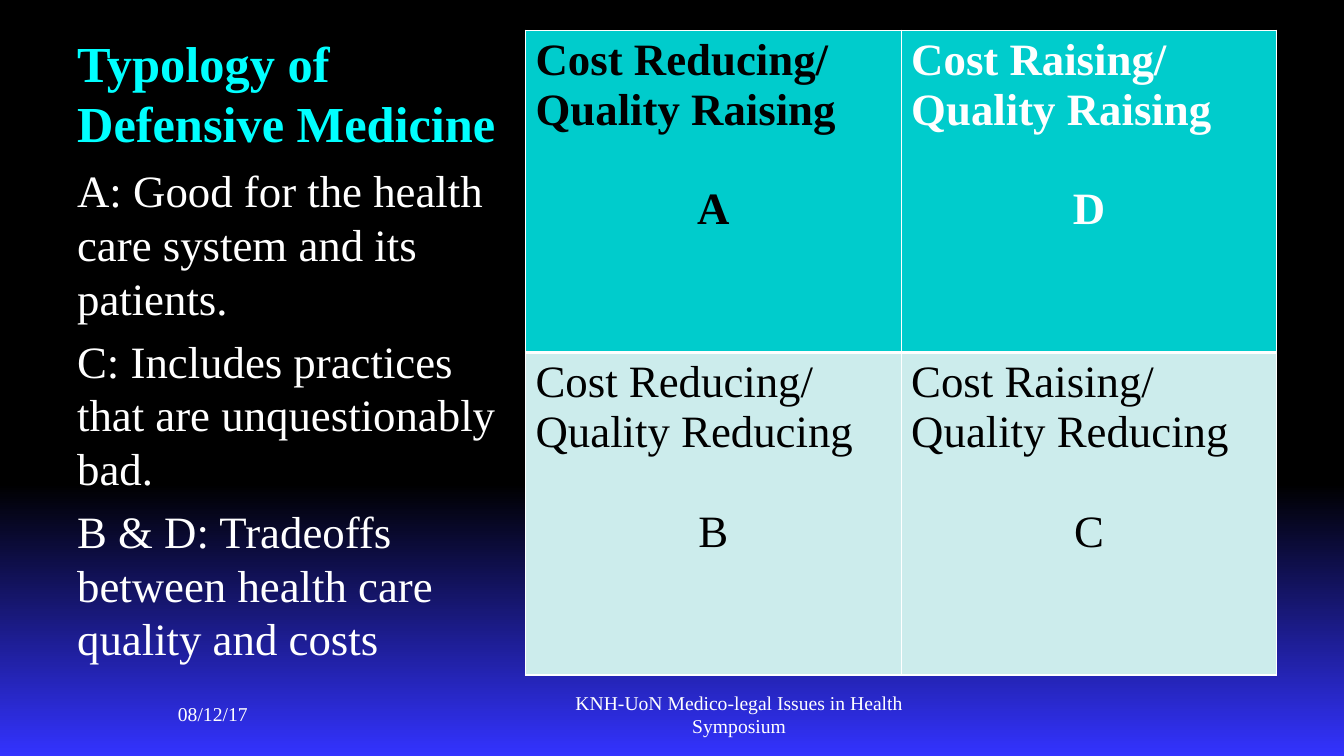
from dataclasses import dataclass
from lxml.etree import SubElement
from pptx import Presentation
from pptx.dml.color import RGBColor
from pptx.enum.text import MSO_ANCHOR, PP_ALIGN
from pptx.oxml.ns import qn
from pptx.util import Inches, Pt

WIDE, HIGH = 13.33, 7.5
FONT = "Times New Roman"
WHITE, BLACK, CYAN, BLUE = "FFFFFF", "000000", "00FFFF", "3333FF"
TEAL, PALE = "00CCCC", "CCECEC"


@dataclass(frozen=True)
class Area:
    left: float
    top: float
    width: float
    height: float

    def box(self) -> tuple:
        return (Inches(WIDE * self.left), Inches(HIGH * self.top),
                Inches(WIDE * self.width), Inches(HIGH * self.height))


@dataclass(frozen=True)
class Label:
    area: Area
    lines: tuple
    style: dict


@dataclass(frozen=True)
class Quad:
    row: int
    col: int
    cost: str
    value: str
    mark: str
    ink: str


LABELS = (
    Label(Area(0.05, 0.024, 0.33, 0.185), ("Typology of Defensive Medicine",),
          dict(size=36, color=CYAN, bold=True, anchor=MSO_ANCHOR.BOTTOM)),
    Label(Area(0.05, 0.209, 0.33, 0.684),
          ("A: Good for the health care system and its patients.",
           "C: Includes practices that are unquestionably bad.",
           "B & D: Tradeoffs between health care quality and costs"),
          dict(size=32, gap=6.4)),
    Label(Area(0.125, 0.911, 0.209, 0.067), ("08/12/17",),
          dict(size=14, anchor=MSO_ANCHOR.MIDDLE)),
    Label(Area(0.392, 0.911, 0.316, 0.067),
          ("KNH-UoN Medico-legal Issues in Health Symposium",),
          dict(size=14, anchor=MSO_ANCHOR.MIDDLE, align=PP_ALIGN.CENTER)),
)
GRID = Area(0.391, 0.04, 0.559, 0.853)
QUADS = (
    Quad(0, 0, "Cost Reducing/", "Quality Raising", "A", BLACK),
    Quad(0, 1, "Cost Raising/", "Quality Raising", "D", WHITE),
    Quad(1, 0, "Cost Reducing/", "Quality Reducing", "B", BLACK),
    Quad(1, 1, "Cost Raising/", "Quality Reducing", "C", BLACK),
)


def tint(code: str) -> RGBColor:
    return RGBColor.from_string(code)


def write(frame, lines, *, size, color=WHITE, bold=False, align=PP_ALIGN.LEFT,
          anchor=MSO_ANCHOR.TOP, gap=0) -> None:
    frame.word_wrap = True
    frame.vertical_anchor = anchor
    for i, line in enumerate(lines):
        para = frame.paragraphs[0] if i == 0 else frame.add_paragraph()
        para.alignment = align
        para.space_before = Pt(gap if i else 0)
        run = para.add_run()
        run.text = line
        font = run.font
        font.name, font.size, font.bold = FONT, Pt(size), bold
        font.color.rgb = tint(color)


def edge(cell, side: str, width: float) -> None:
    line = SubElement(cell._tc.get_or_add_tcPr(), qn(f"a:ln{side}"), w=str(Pt(width)))
    fill = SubElement(line, qn("a:solidFill"))
    SubElement(fill, qn("a:srgbClr"), val=WHITE)


def draw_label(slide, label: Label) -> None:
    shape = slide.shapes.add_textbox(*label.area.box())
    write(shape.text_frame, label.lines, **label.style)


def draw_quad(table, quad: Quad) -> None:
    cell = table.cell(quad.row, quad.col)
    head = quad.row == 0
    for side, width in (("L", 1), ("R", 1), ("T", 1 if head else 3), ("B", 3 if head else 1)):
        edge(cell, side, width)
    cell.fill.solid()
    cell.fill.fore_color.rgb = tint(TEAL if head else PALE)
    write(cell.text_frame, (quad.cost, quad.value, quad.mark),
          size=32, color=quad.ink, bold=head)
    mark = cell.text_frame.paragraphs[-1]
    mark.alignment = PP_ALIGN.CENTER
    mark.space_before = Pt(35.6)


def draw_table(slide) -> None:
    table = slide.shapes.add_table(2, 2, *GRID.box()).table
    table.horz_banding = False
    for quad in QUADS:
        draw_quad(table, quad)


def paint(slide) -> None:
    fill = slide.background.fill
    fill.gradient()
    fill.gradient_angle = 270
    for stop, place, code in zip(fill.gradient_stops, (0.64, 1), (BLACK, BLUE)):
        stop.position = place
        stop.color.rgb = tint(code)


def main() -> None:
    deck = Presentation()
    deck.slide_width, deck.slide_height = Inches(WIDE), Inches(HIGH)
    slide = deck.slides.add_slide(deck.slide_layouts[6])
    paint(slide)
    draw_table(slide)
    for label in LABELS:
        draw_label(slide, label)
    deck.save("out.pptx")


if __name__ == "__main__":
    main()
